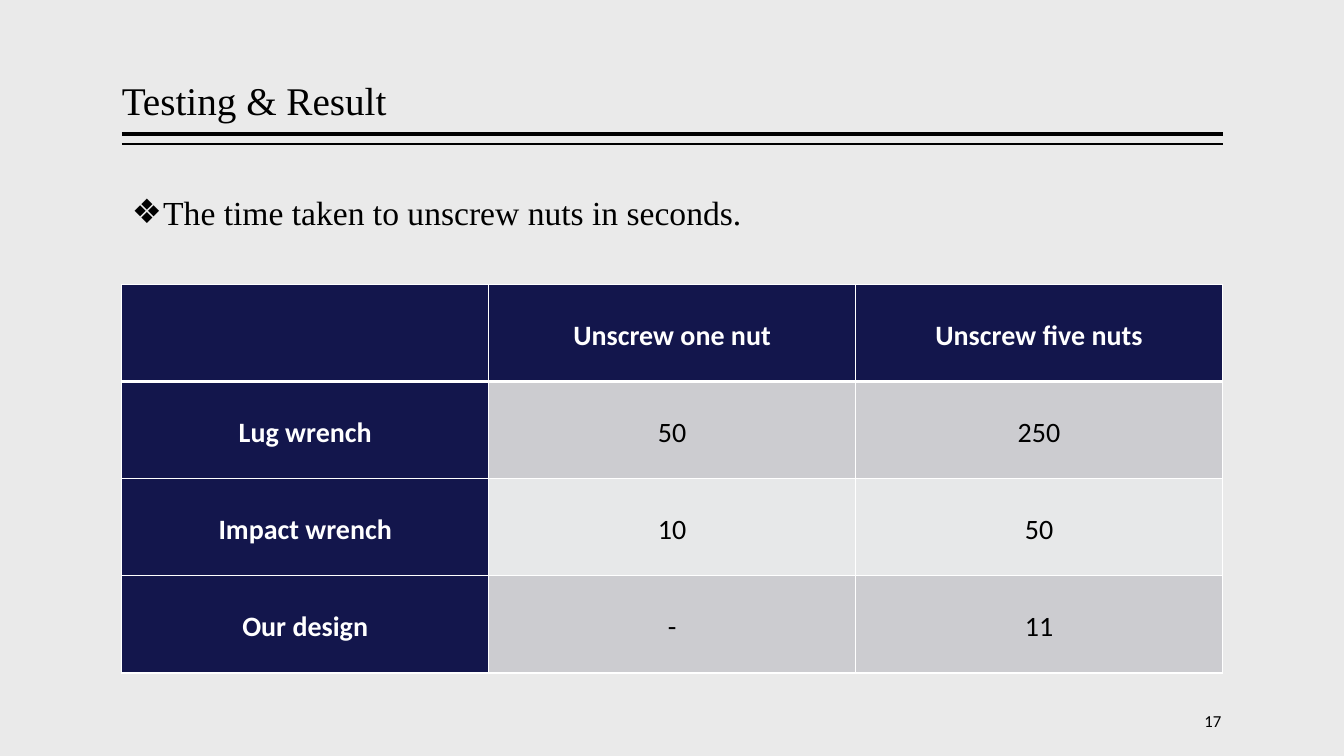
from dataclasses import dataclass

import pptx
import pptx.dml.color
import pptx.enum.shapes
import pptx.enum.text
import pptx.oxml
import pptx.oxml.ns
import pptx.util
from pptx.dml.color import RGBColor
from pptx.util import Cm, Pt

BACKGROUND = RGBColor(0xEA, 0xEA, 0xEA)
BLACK = RGBColor(0, 0, 0)
WHITE = RGBColor(0xFF, 0xFF, 0xFF)
NAVY = RGBColor(0x13, 0x16, 0x4C)
BAND_DARK = RGBColor(0xCC, 0xCC, 0xD0)
BAND_LIGHT = RGBColor(0xE7, 0xE8, 0xE9)

SERIF = "Times New Roman"
SANS = "Calibri"
LEFT = Cm(3.07)
WIDTH = Cm(27.74)

TIMES = (
    ("", "Unscrew one nut", "Unscrew five nuts"),
    ("Lug wrench", "50", "250"),
    ("Impact wrench", "10", "50"),
    ("Our design", "-", "11"),
)


@dataclass(frozen=True)
class Rule:
    top: pptx.util.Length
    weight: pptx.util.Length


@dataclass(frozen=True)
class TextStyle:
    font: str
    size: int
    color: RGBColor = BLACK
    bold: bool = False
    align: pptx.enum.text.PP_ALIGN = pptx.enum.text.PP_ALIGN.LEFT
    spacing: float = 1.0


TITLE_RULES = (Rule(Cm(3.38), Pt(3)), Rule(Cm(3.63), Pt(1)))


def write(frame, text: str, style: TextStyle) -> None:
    frame.text = text
    paragraph = frame.paragraphs[0]
    paragraph.alignment = style.align
    paragraph.line_spacing = style.spacing
    paragraph.space_before = Pt(0)
    for run in paragraph.runs:
        run.font.name = style.font
        run.font.size = Pt(style.size)
        run.font.bold = style.bold
        run.font.color.rgb = style.color


def place(shape, left: int, top: int, width: int, height: int) -> None:
    shape.left, shape.top, shape.width, shape.height = left, top, width, height


def remove_side_margins(frame) -> None:
    frame.margin_left = frame.margin_right = 0


def draw_rule(slide, rule: Rule) -> None:
    line = slide.shapes.add_connector(
        pptx.enum.shapes.MSO_CONNECTOR.STRAIGHT, LEFT, rule.top, LEFT + WIDTH, rule.top)
    line.line.color.rgb = BLACK
    line.line.width = rule.weight
    properties = line._element.spPr
    properties.append(properties.makeelement(pptx.oxml.ns.qn("a:effectLst"), {}))


def set_bullet(paragraph, symbol: str, indent: int) -> None:
    properties = paragraph._p.get_or_add_pPr()
    properties.set("marL", str(indent))
    properties.set("indent", str(-indent))
    bullet = properties.makeelement(pptx.oxml.ns.qn("a:buChar"), {"char": symbol})
    properties.append(bullet)


def set_borders(cell, top: int, bottom: int) -> None:
    properties = cell._tc.get_or_add_tcPr()
    edges = {"lnL": 1, "lnR": 1, "lnT": top, "lnB": bottom}
    for position, (edge, weight) in enumerate(edges.items()):
        properties.insert(position, pptx.oxml.parse_xml(
            f'<a:{edge} {pptx.oxml.ns.nsdecls("a")} w="{Pt(weight)}">'
            f'<a:solidFill><a:srgbClr val="{WHITE}"/></a:solidFill></a:{edge}>'))


def draw_times_table(slide) -> None:
    row_height = Cm(2.45)
    table = slide.shapes.add_table(
        len(TIMES), len(TIMES[0]), LEFT, Cm(7.16), WIDTH, row_height * len(TIMES)).table
    for row, values in enumerate(TIMES):
        table.rows[row].height = row_height
        for column, value in enumerate(values):
            heading = row == 0 or column == 0
            cell = table.cell(row, column)
            cell.margin_left = cell.margin_right = Cm(0.18)
            cell.margin_top = cell.margin_bottom = 0
            cell.vertical_anchor = pptx.enum.text.MSO_ANCHOR.TOP
            write(cell.text_frame, value, TextStyle(
                SANS, 20, WHITE if heading else BLACK, heading,
                pptx.enum.text.PP_ALIGN.CENTER, 2.0))
            cell.fill.solid()
            band = BAND_DARK if row % 2 else BAND_LIGHT
            cell.fill.fore_color.rgb = NAVY if heading else band
            set_borders(cell, 3 if row == 1 else 1, 3 if row == 0 else 1)


def main() -> None:
    deck = pptx.Presentation()
    deck.slide_width, deck.slide_height = Cm(33.87), Cm(19.05)
    slide = deck.slides.add_slide(deck.slide_layouts[1])
    slide.background.fill.solid()
    slide.background.fill.fore_color.rgb = BACKGROUND

    # Title with its double rule
    for rule in TITLE_RULES:
        draw_rule(slide, rule)
    title = slide.shapes.title
    place(title, LEFT, Cm(0.2), WIDTH, Cm(3.05))
    write(title.text_frame, "Testing & Result", TextStyle(SERIF, 28, spacing=0.9))
    title.text_frame.vertical_anchor = pptx.enum.text.MSO_ANCHOR.BOTTOM
    title.text_frame.auto_size = pptx.enum.text.MSO_AUTO_SIZE.NONE
    remove_side_margins(title.text_frame)

    # Statement of what was measured
    measure = slide.placeholders[1]
    place(measure, LEFT, Cm(4.7), Cm(16.23), Cm(1.27))
    write(measure.text_frame, "The time taken to unscrew nuts in seconds.",
          TextStyle(SERIF, 24))
    measure.text_frame.word_wrap = False
    measure.text_frame.auto_size = pptx.enum.text.MSO_AUTO_SIZE.SHAPE_TO_FIT_TEXT
    set_bullet(measure.text_frame.paragraphs[0], "❖", Cm(0.79))

    # Measured times
    draw_times_table(slide)

    # Page number
    page_number = slide.shapes.add_textbox(Cm(25.7), Cm(17.65), Cm(5.08), Cm(1.02))
    write(page_number.text_frame, "17",
          TextStyle(SANS, 12, align=pptx.enum.text.PP_ALIGN.RIGHT))
    page_number.text_frame.word_wrap = True
    page_number.text_frame.vertical_anchor = pptx.enum.text.MSO_ANCHOR.MIDDLE
    remove_side_margins(page_number.text_frame)

    deck.save("out.pptx")


if __name__ == "__main__":
    main()
